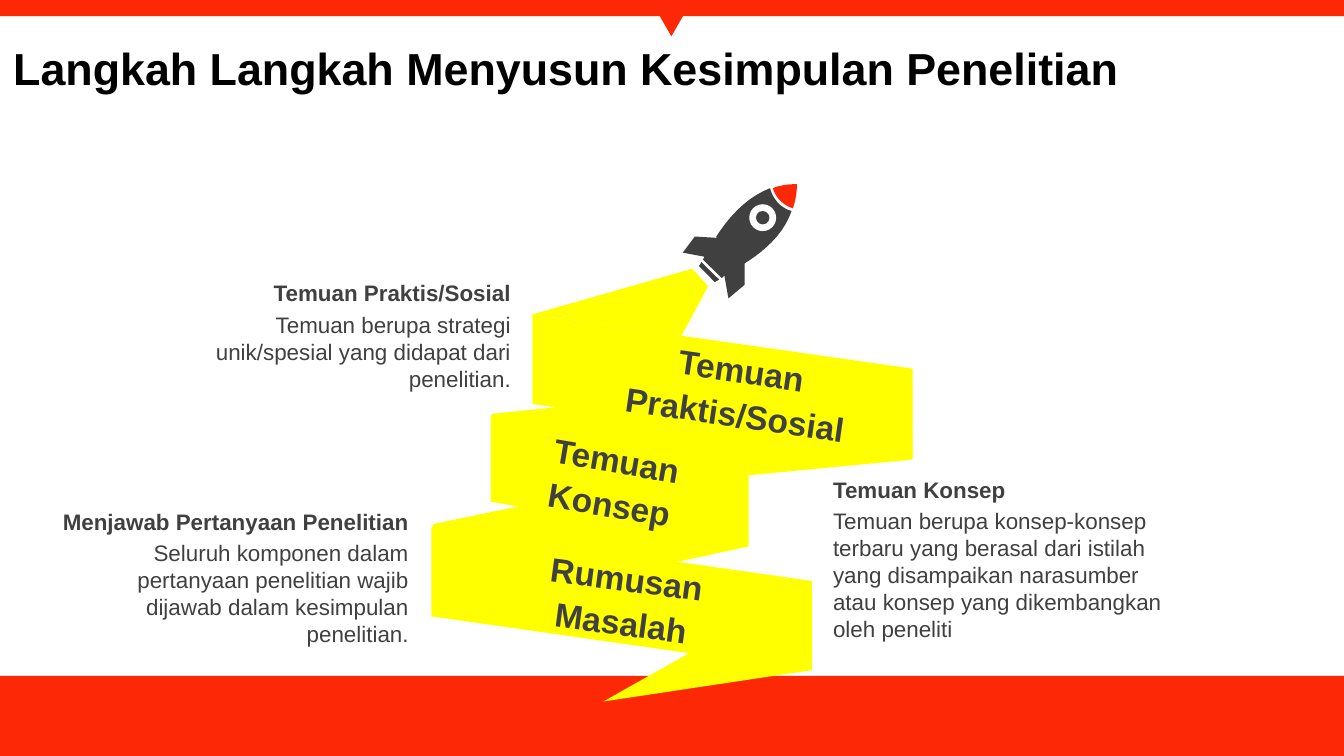
from pptx import Presentation
from pptx import util as u
from pptx.dml import color
from pptx.enum import shapes, text

RED, YELLOW, GREY, WHITE = "FD2906", "FFFF00", "404040", "FFFFFF"
COLS, ROWS = 1000, 562.5  # square cells over the slide
G = u.Inches(0.01)
FINE = 100  # steps per cell for outlines
KIND = shapes.MSO_SHAPE

prs = Presentation()
prs.slide_width, prs.slide_height = round(COLS * G), round(ROWS * G)
s = prs.slides.add_slide(prs.slide_layouts[6])


def paint(sp, fill):
    sp.shadow.inherit = False
    sp.fill.solid()
    sp.fill.fore_color.rgb = color.RGBColor.from_string(fill)
    sp.line.fill.background()


def write(words, box, size=12, bold=False, hue=GREY, align="LEFT",
          anchor="TOP", turn=0, spacing=None, before=0, top=5):
    sp = s.shapes.add_textbox(*[round(v * G) for v in box])
    sp.rotation = turn
    tf = sp.text_frame
    tf.word_wrap = True
    tf.margin_top = round(top * G)
    tf.vertical_anchor = getattr(text.MSO_ANCHOR, anchor)
    p = tf.paragraphs[0]
    p.alignment = getattr(text.PP_ALIGN, align)
    p.space_before = u.Pt(before)
    if spacing:
        p.line_spacing = spacing
    r = p.add_run()
    r.text = words
    r.font.name, r.font.size, r.font.bold = "Arial", u.Pt(size), bold
    r.font.color.rgb = color.RGBColor.from_string(hue)


# Red frame, ribbon bands and rocket window
BAR, BAND = KIND.RECTANGLE, KIND.PARALLELOGRAM
for kind, box, turn, slant, fill in [
    (BAR, (0, 503, COLS, ROWS - 503), 0, None, RED),
    (BAR, (0, 0, COLS, 12), 0, None, RED),
    (KIND.ISOSCELES_TRIANGLE, (484, 0, 31, 27), 180, None, RED),
    (BAND, (484, 146, 107, 283), 90, 0.377, YELLOW),
    (BAND, (412, 262, 98, 192), 90, 0.344, YELLOW),
    (BAND, (409, 304, 107, 283), 90, 0.377, YELLOW),
]:
    sp = s.shapes.add_shape(kind, *[round(v * G) for v in box])
    sp.rotation = turn
    if slant:
        sp.adjustments[0] = slant
    paint(sp, fill)

# Outlines: a pair is a corner, six numbers are a Bezier curve
OUTLINES = [
    # Ribbon folds, tail and tip
    (YELLOW, [(602, 499), (449, 522), (603, 435)]),
    (YELLOW, [(554, 342), (322, 390), (323, 457), (555, 407)]),
    (YELLOW, [(366, 308), (678, 276), (679, 342), (366, 372)]),
    (YELLOW, [(515, 200), (396, 234), (507, 250), (527, 213)]),
    # Rocket exhaust, body and nose
    (GREY, [(522, 195), (535, 208), (534, 209, 533, 209, 532, 210), (520, 198)]),
    (GREY, [(573, 140), (575, 148, 581, 155, 589, 157),
            (583, 175, 567, 188, 554, 196), (554, 212), (542, 222), (539, 205),
            (537, 207), (523, 193), (524, 192, 524, 192, 524, 191), (508, 188),
            (517, 176), (533, 177), (533, 176), (542, 162, 555, 147, 573, 140)]),
    (RED, [(593, 137), (593, 143, 592, 149, 590, 155),
           (583, 153, 577, 147, 575, 140), (580, 138, 586, 137, 593, 137)]),
]
for fill, steps in OUTLINES:
    pts = [steps[0]]
    for step in steps[1:]:
        if len(step) == 2:
            pts.append(step)
            continue
        knots = [pts[-1], step[:2], step[2:4], step[4:]]
        for t in [i / 10 for i in range(1, 11)]:
            weights = ((1 - t) ** 3, 3 * t * (1 - t) ** 2,
                       3 * t * t * (1 - t), t ** 3)
            pts.append(tuple(sum(w * k[axis] for w, k in zip(weights, knots))
                             for axis in (0, 1)))
    pts = [(x * FINE, y * FINE) for x, y in pts]
    fb = s.shapes.build_freeform(*pts[0], scale=G / FINE)
    fb.add_line_segments(pts[1:], close=True)
    paint(fb.convert_to_shape(), fill)

# Rocket window
for radius, fill in [(10, WHITE), (5, GREY)]:
    box = (567.5 - radius, 162 - radius, 2 * radius, 2 * radius)
    paint(s.shapes.add_shape(KIND.OVAL, *[round(v * G) for v in box]), fill)

# Title
write("Langkah Langkah Menyusun Kesimpulan Penelitian", (0, 21, COLS, 63),
      size=24, bold=True, hue="000000", top=9)

# Explanations: heading with body text below
for left, top, height, align, heading, body in [
    (610, 349, 111, "LEFT", "Temuan Konsep",
     "Temuan berupa konsep-konsep terbaru yang berasal dari istilah yang "
     "disampaikan narasumber atau konsep yang dikembangkan oleh peneliti"),
    (112, 203, 71, "RIGHT", "Temuan Praktis/Sosial",
     "Temuan berupa strategi unik/spesial yang didapat dari penelitian."),
    (36, 373, 91, "RIGHT", "Menjawab Pertanyaan Penelitian",
     "Seluruh komponen dalam pertanyaan penelitian wajib dijawab dalam "
     "kesimpulan penelitian."),
]:
    write(body, (left, top + 23.5, 278, height), align=align)
    write(heading, (left, top, 278, 30), bold=True, align=align)

# Slanted labels on the ribbon
for words, left, top, width, turn in [
    ("Rumusan Masalah", 363, 416, 203, 7.6),
    ("Temuan Konsep", 356, 328, 201, 9.7),
    ("Temuan Praktis/Sosial", 440, 261, 219, 8.3),
]:
    write(words, (left, top, width, 58), size=18, bold=True, align="CENTER",
          anchor="MIDDLE", turn=turn, spacing=1.1, before=3.6)

prs.save("out.pptx")
